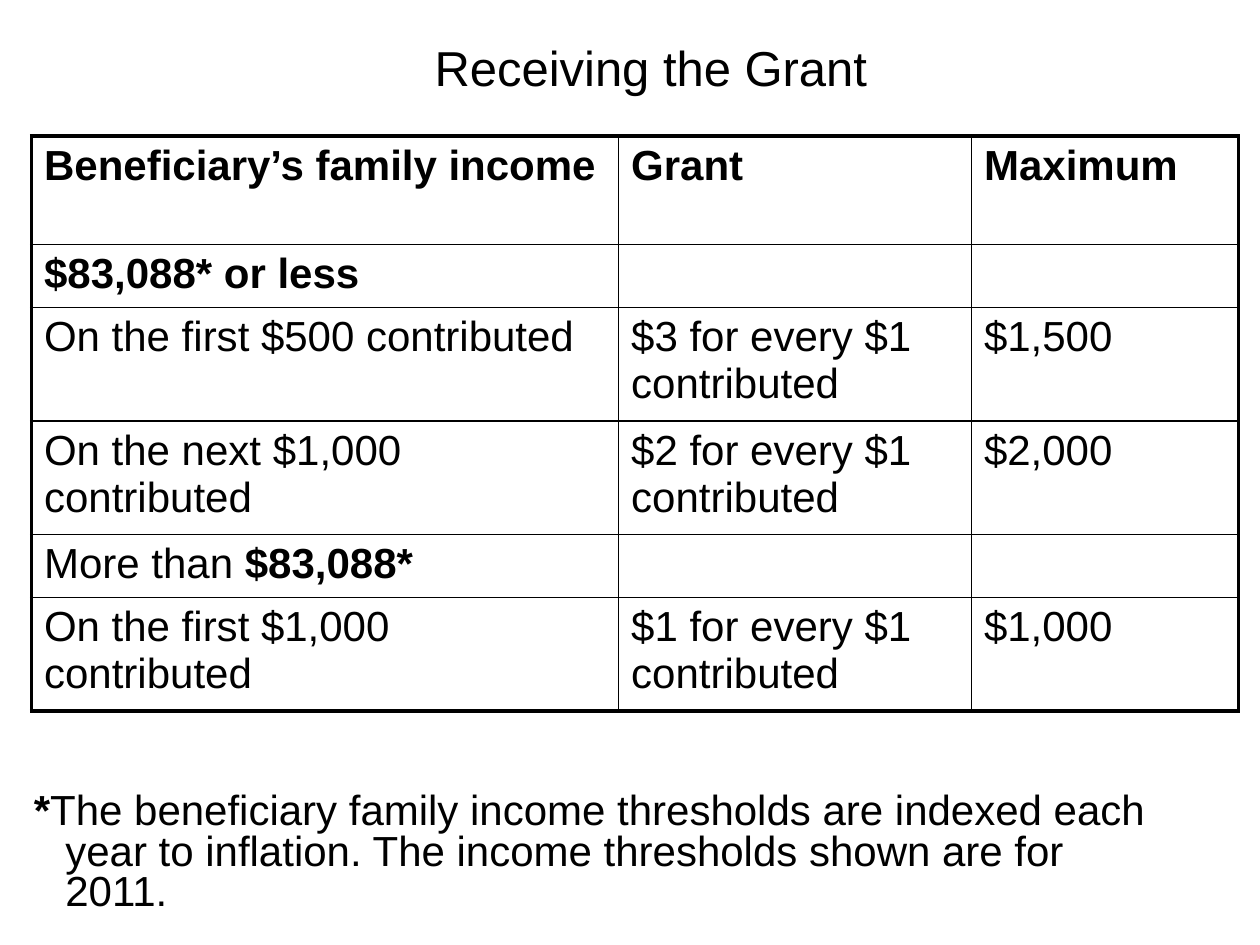
from dataclasses import dataclass

from pptx import Presentation
from pptx.dml.color import RGBColor
from pptx.enum import text
from pptx.oxml import parse_xml
from pptx.oxml.ns import nsdecls
from pptx.util import Inches, Pt


@dataclass(frozen=True)
class Theme:
    """Colours, type sizes and line widths of the slide."""
    ink: str = "000000"
    face: str = "Arial"
    head: int = 28
    body: int = 24
    thin: float = 1
    thick: float = 2.25


THEME = Theme()
COLS = (4.66, 2.8, 2.12)
ROWS = (
    (0.86, [("Beneficiary’s family income", True)],
     [("Grant", True)], [("Maximum", True)]),
    (0.5, [("$83,088* or less", True)], [], []),
    (0.9, [("On the first $500 contributed", False)],
     [("$3 for every $1 contributed", False)], [("$1,500", False)]),
    (0.9, [("On the next $1,000 contributed", False)],
     [("$2 for every $1 contributed", False)], [("$2,000", False)]),
    (0.5, [("More than ", False), ("$83,088*", True)], [], []),
    (0.9, [("On the first $1,000 contributed", False)],
     [("$1 for every $1 contributed", False)], [("$1,000", False)]),
)
NOTE = [("*", True), ("The beneficiary family income thresholds are indexed "
                      "each year to inflation. The income thresholds shown "
                      "are for 2011.", False)]


def write(para, parts, size):
    """Fill a paragraph with (words, bold) parts in the theme's type."""
    font = para.font
    font.name, font.size = THEME.face, Pt(size)
    font.color.rgb = RGBColor.from_string(THEME.ink)
    bolds = {bold for _, bold in parts}
    if len(bolds) == 1:
        font.bold = bolds.pop()
    for words, bold in parts:
        run = para.add_run()
        run.text = words
        if font.bold is None:
            run.font.bold = bold


def add_text(slide, box, parts, size):
    """Add a wrapped text box and return its paragraph."""
    frame = slide.shapes.add_textbox(*map(Inches, box)).text_frame
    frame.word_wrap = True
    frame.vertical_anchor = text.MSO_ANCHOR.TOP
    para = frame.paragraphs[0]
    write(para, parts, size)
    return para


def rule(cell, sides):
    """Draw the cell's borders, thick where a side is on the outer frame."""
    props = cell._tc.get_or_add_tcPr()
    for side, outer in sides.items():
        width = Pt(THEME.thick if outer else THEME.thin)
        props.append(parse_xml(
            f'<a:ln{side} {nsdecls("a")} w="{width}"><a:solidFill>'
            f'<a:srgbClr val="{THEME.ink}"/></a:solidFill></a:ln{side}>'))
    cell.fill.background()


def add_grid(slide, left, top):
    """Add the table of grant rates."""
    high = sum(row[0] for row in ROWS)
    box = map(Inches, (left, top, sum(COLS), high))
    grid = slide.shapes.add_table(len(ROWS), len(COLS), *box).table
    grid.first_row = grid.horz_banding = False
    for col, wide in zip(grid.columns, COLS):
        col.width = Inches(wide)
    for i, (tall, *cells) in enumerate(ROWS):
        grid.rows[i].height = Inches(tall)
        for j, parts in enumerate(cells):
            cell = grid.cell(i, j)
            write(cell.text_frame.paragraphs[0], parts, THEME.body)
            rule(cell, {"L": j == 0, "R": j == len(COLS) - 1,
                        "T": i == 0, "B": i == len(ROWS) - 1})


def main():
    """Build the slide and save it."""
    deck = Presentation()
    deck.slide_width, deck.slide_height = Inches(10), Inches(7.5)
    slide = deck.slides.add_slide(deck.slide_layouts[6])
    title = add_text(slide, (0.33, 0.25, 9.67, 1.07),
                     [("Receiving the Grant", False)], THEME.head)
    title.alignment = text.PP_ALIGN.CENTER
    add_grid(slide, 0.25, 1.08)
    note = add_text(slide, (0.17, 6.25, 9.18, 0.46), NOTE, THEME.body)
    note.line_spacing = 0.8
    props = note._p.get_or_add_pPr()
    props.set("marL", str(Inches(0.25)))
    props.set("indent", str(Inches(-0.25)))
    deck.save("out.pptx")


if __name__ == "__main__":
    main()
